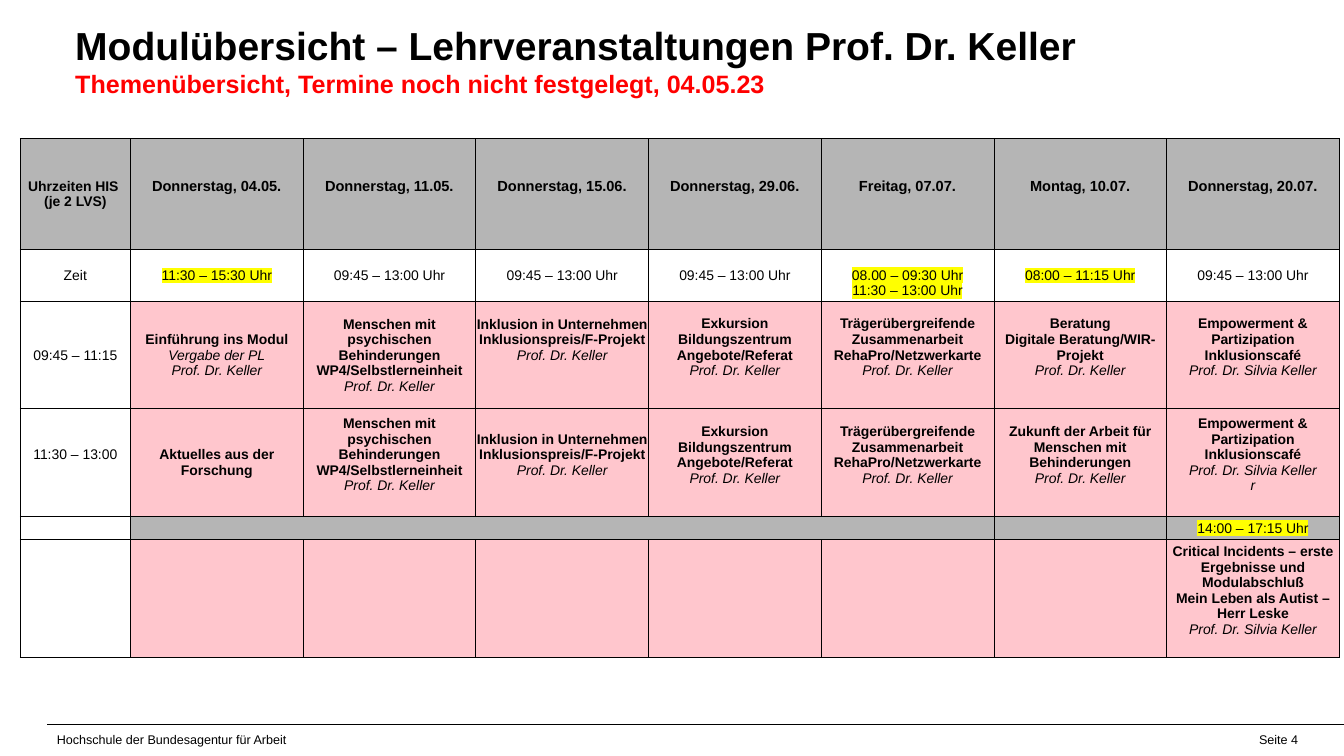
from lxml import etree
from pptx import Presentation
from pptx.dml.color import RGBColor
from pptx.enum.text import MSO_ANCHOR, MSO_AUTO_SIZE, PP_ALIGN
from pptx.oxml.ns import qn
from pptx.util import Cm, Pt

LEFT, CENTER, RIGHT = PP_ALIGN.LEFT, PP_ALIGN.CENTER, PP_ALIGN.RIGHT
TOP, MIDDLE = MSO_ANCHOR.TOP, MSO_ANCHOR.MIDDLE
NO_AUTOFIT = MSO_AUTO_SIZE.NONE

BLACK = RGBColor(0x00, 0x00, 0x00)
RED = RGBColor(0xFF, 0x00, 0x00)
YELLOW = RGBColor(0xFF, 0xFF, 0x00)
GREY = RGBColor(0xB5, 0xB5, 0xB5)
PINK = RGBColor(0xFF, 0xC6, 0xCD)

KELLER = "Prof. Dr. Keller"
SILVIA = "Prof. Dr. Silvia Keller"
ITALIC_LINES = {KELLER, SILVIA, "Vergabe der PL", "r"}
MORNING = "09:45 – 13:00 Uhr"
HIGHLIGHTED = {(1, 1), (1, 5), (1, 6), (4, 7)}

ILLNESS = ["Menschen mit psychischen Behinderungen", "WP4/Selbstlerneinheit", KELLER]
INCLUSION = ["Inklusion in Unternehmen", "Inklusionspreis/F-Projekt", KELLER]
EXCURSION = ["Exkursion", "Bildungszentrum", "Angebote/Referat", KELLER]
NETWORK = ["Trägerübergreifende Zusammenarbeit", "RehaPro/Netzwerkarte", KELLER]
EMPOWERMENT = ["Empowerment &", "Partizipation", "Inklusionscafé", SILVIA]

SCHEDULE = [
    [["Uhrzeiten HIS ", "(je 2 LVS)"], ["Donnerstag, 04.05."], ["Donnerstag, 11.05."],
     ["Donnerstag, 15.06."], ["Donnerstag, 29.06."], ["Freitag, 07.07."],
     ["Montag, 10.07."], ["Donnerstag, 20.07."]],
    [["Zeit"], ["11:30 – 15:30 Uhr"], [MORNING], [MORNING], [MORNING],
     ["08.00 – 09:30 Uhr", "11:30 – 13:00 Uhr"], ["08:00 – 11:15 Uhr"], [MORNING]],
    [["09:45 – 11:15"], ["Einführung ins Modul", "Vergabe der PL", KELLER],
     ILLNESS, INCLUSION, EXCURSION, NETWORK,
     ["Beratung", "Digitale Beratung/WIR-Projekt", KELLER], EMPOWERMENT],
    [["11:30 – 13:00"], ["Aktuelles aus der Forschung"],
     ILLNESS, INCLUSION, EXCURSION, NETWORK,
     ["Zukunft der Arbeit für Menschen mit Behinderungen", KELLER], EMPOWERMENT + ["r"]],
    [[]] * 7 + [["14:00 – 17:15 Uhr"]],
    [[]] * 7 + [["Critical Incidents – erste Ergebnisse und Modulabschluß",
                 "Mein Leben als Autist – Herr Leske", SILVIA]],
]
COLUMN_WIDTHS = [2.79] + [4.37] * 7
ROW_HEIGHTS = [2.8, 1.33, 2.71, 2.73, 0.58, 2.98]
ROW_FILLS = [GREY, None, PINK, PINK, GREY, PINK]
BOTTOM_MARGINS = [0.4, 0, 0.4, 0.4, 0, 0.4]
BOTTOM_EXCEPTIONS = {(0, 0): 0, (2, 0): 0, (2, 1): 0, (2, 2): 0, (2, 3): 0.79, (3, 1): 0}
TOP_EXCEPTIONS = {(1, 5): 0.4}


def add_run(paragraph, text, color=BLACK, highlight=None, **font_format):
    run = paragraph.add_run()
    run.text = text
    run.font.color.rgb = color
    if highlight is not None:
        mark = etree.SubElement(run.font._element, qn("a:highlight"))
        etree.SubElement(mark, qn("a:srgbClr"), val=str(highlight))
    for name, value in {"name": "Arial", **font_format}.items():
        setattr(run.font, name, value)


def add_border(cell):
    properties = cell._tc.get_or_add_tcPr()
    for side in ("lnL", "lnR", "lnT", "lnB"):
        line = etree.SubElement(properties, qn(f"a:{side}"), w=str(Pt(0.5)))
        fill = etree.SubElement(line, qn("a:solidFill"))
        etree.SubElement(fill, qn("a:srgbClr"), val=str(BLACK))


prs = Presentation()
prs.slide_width, prs.slide_height = Cm(34.01), Cm(19.13)
slide = prs.slides.add_slide(prs.slide_layouts[5])

title = slide.shapes.title
title_place = {"left": Cm(1.65), "top": Cm(0.41), "width": Cm(31.17), "height": Cm(2.39)}
for name, value in title_place.items():
    setattr(title, name, value)
title_frame = title.text_frame
title_format = {"vertical_anchor": TOP, "auto_size": NO_AUTOFIT, "word_wrap": True}
for name, value in title_format.items():
    setattr(title_frame, name, value)
heading = title_frame.paragraphs[0]
heading.alignment = LEFT
add_run(heading, "Modulübersicht – Lehrveranstaltungen Prof. Dr. Keller", size=Pt(28), bold=True)
heading.add_line_break()
add_run(heading, "Themenübersicht, Termine noch nicht festgelegt, 04.05.23",
        color=RED, size=Pt(18), bold=True)

schedule = slide.shapes.add_table(
    len(ROW_HEIGHTS), len(COLUMN_WIDTHS), Cm(0.51), Cm(3.5),
    Cm(sum(COLUMN_WIDTHS)), Cm(sum(ROW_HEIGHTS))).table
schedule.first_row = False
schedule.horz_banding = False
for column, width in zip(schedule.columns, COLUMN_WIDTHS):
    column.width = Cm(width)
for row, height in zip(schedule.rows, ROW_HEIGHTS):
    row.height = Cm(height)

for r, entries in enumerate(SCHEDULE):
    for c, lines in enumerate(entries):
        cell = schedule.cell(r, c)
        cell_format = {
            "vertical_anchor": MIDDLE,
            "margin_left": Cm(0.02),
            "margin_right": Cm(0.02),
            "margin_top": Cm(TOP_EXCEPTIONS.get((r, c), 0.02)),
            "margin_bottom": Cm(BOTTOM_EXCEPTIONS.get((r, c), BOTTOM_MARGINS[r])),
        }
        for name, value in cell_format.items():
            setattr(cell, name, value)
        add_border(cell)
        if ROW_FILLS[r] is None or (c == 0 and r > 0):
            cell.fill.background()
        else:
            cell.fill.solid()
            cell.fill.fore_color.rgb = ROW_FILLS[r]
        frame = cell.text_frame
        if not lines:
            etree.SubElement(frame.paragraphs[0]._p, qn("a:endParaRPr"), sz="1000")
        for i, line in enumerate(lines):
            paragraph = frame.add_paragraph() if i else frame.paragraphs[0]
            paragraph.alignment = CENTER
            italic = line in ITALIC_LINES
            topic = r in (2, 3, 5) and c > 0
            add_run(paragraph, line,
                    highlight=YELLOW if (r, c) in HIGHLIGHTED else None,
                    size=Pt(10.5 if r == 0 and c > 0 else 10),
                    bold=r == 0 or (topic and not italic), italic=italic)
schedule.cell(4, 1).merge(schedule.cell(4, 5))

footer_rule = slide.shapes.add_connector(1, Cm(1.19), Cm(18.34), Cm(34.01), Cm(18.34))
footer_rule.line.color.rgb = BLACK
footer_rule.line.width = Pt(0.5)
etree.SubElement(footer_rule._element.spPr, qn("a:effectLst"))

for text, left, top, width, height, alignment, anchor in (
    ("Hochschule der Bundesagentur für Arbeit", 1.19, 18.39, 8.43, 0.64, LEFT, TOP),
    ("Seite 4", 30.71, 18.34, 2.39, 0.76, RIGHT, MIDDLE),
):
    footer = slide.shapes.add_textbox(Cm(left), Cm(top), Cm(width), Cm(height)).text_frame
    footer.word_wrap = True
    footer.vertical_anchor = anchor
    footer.paragraphs[0].alignment = alignment
    add_run(footer.paragraphs[0], text, size=Pt(9))

prs.save("out.pptx")
